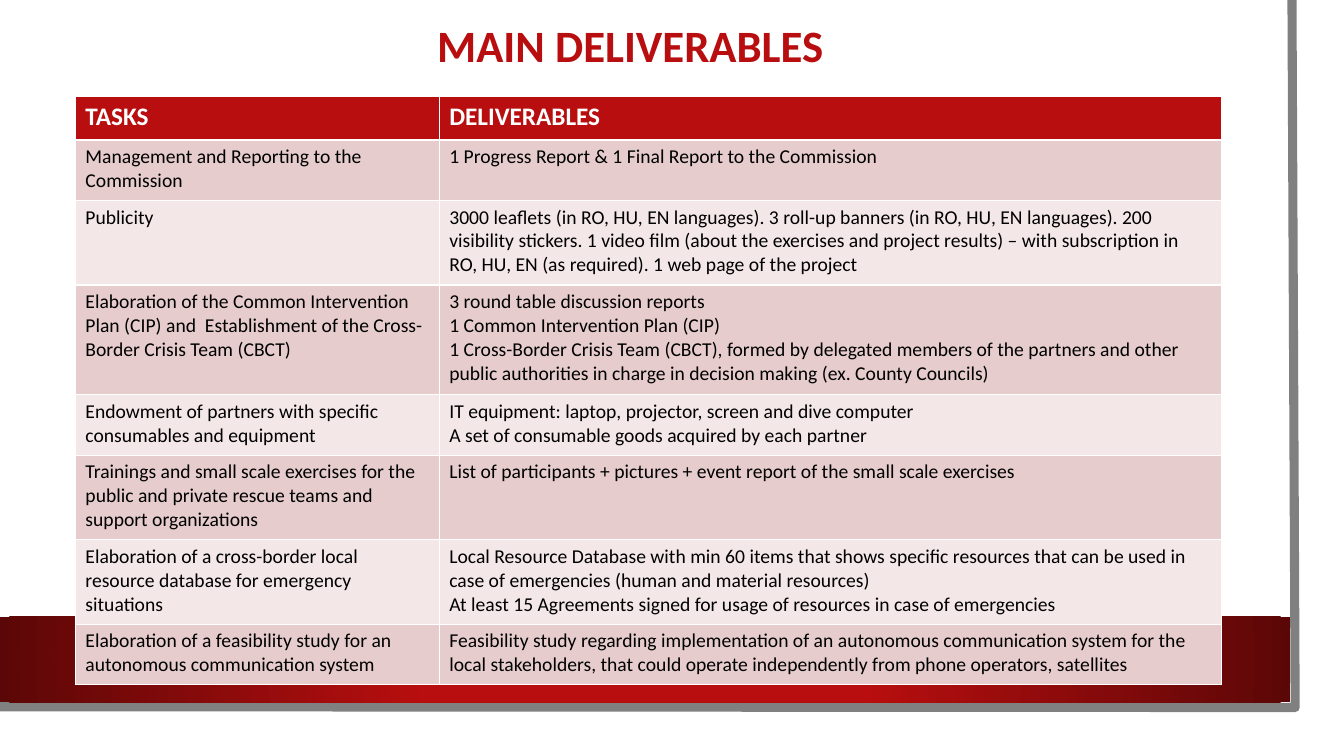
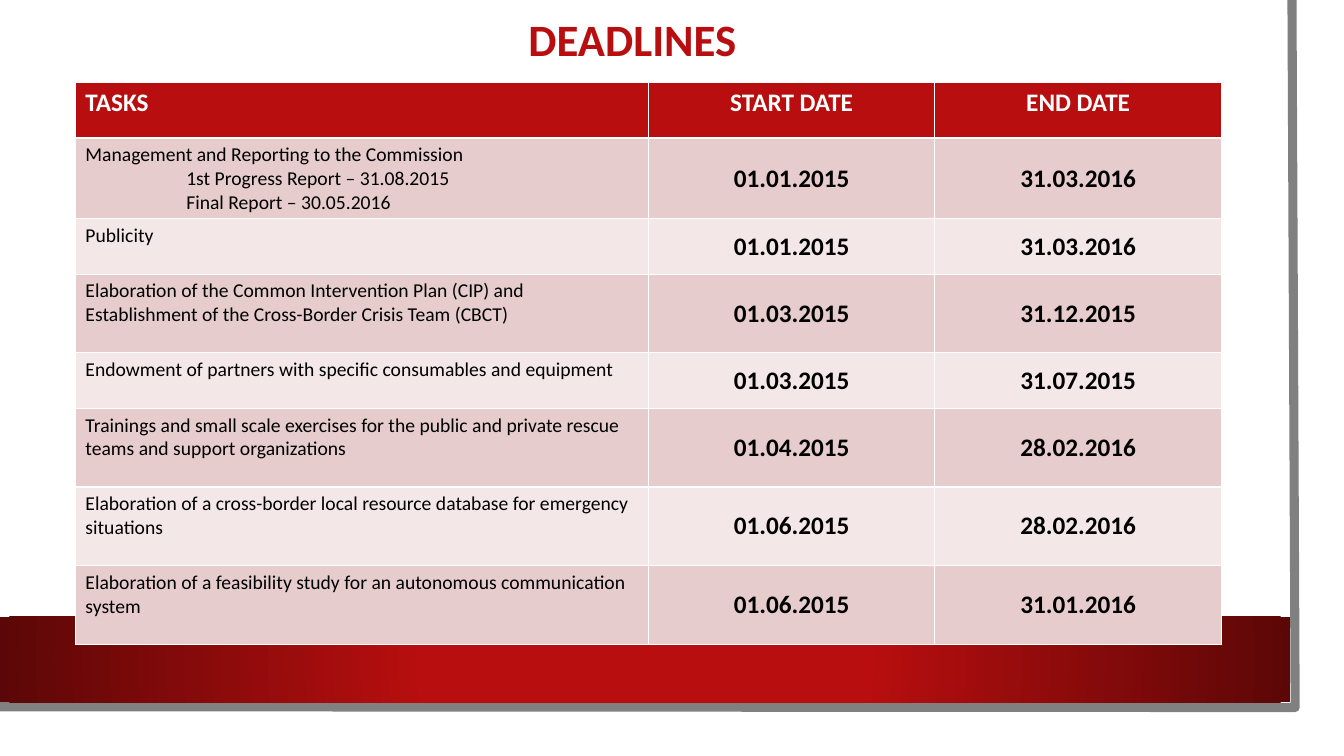
from dataclasses import dataclass

import lxml.etree
import pptx
import pptx.dml.color
import pptx.enum.shapes
import pptx.enum.text
import pptx.oxml.ns
import pptx.presentation
import pptx.slide
import pptx.table
import pptx.text.text
import pptx.util

Cm = pptx.util.Cm
Pt = pptx.util.Pt
RGBColor = pptx.dml.color.RGBColor
Align = pptx.enum.text.PP_ALIGN
Anchor = pptx.enum.text.MSO_ANCHOR

RED = RGBColor(0xB8, 0x0E, 0x0F)
DARK_RED = RGBColor(0x5C, 0x07, 0x07)
GREY = RGBColor(0x80, 0x80, 0x80)
WHITE = RGBColor(0xFF, 0xFF, 0xFF)
BLACK = RGBColor(0x00, 0x00, 0x00)
ROW_FILLS = (RGBColor(0xE6, 0xCC, 0xCC), RGBColor(0xF3, 0xE7, 0xE7))

FONT = "Calibri"
TABLE_LEFT = 1.9
TABLE_WIDTH = 28.88
FRAME_POINTS = ((32.56, 0), (32.64, 17.83), (-0.08, 17.81))
SUBITEM_INDENT = Cm(2.54)

TASKS = (
    "Management and Reporting to the Commission",
    "Publicity",
    "Elaboration of the Common Intervention Plan (CIP) and  Establishment of the "
    "Cross-Border Crisis Team (CBCT)",
    "Endowment of partners with specific consumables and equipment",
    "Trainings and small scale exercises for the public and private rescue teams "
    "and support organizations",
    "Elaboration of a cross-border local resource database for emergency situations",
    "Elaboration of a feasibility study for an autonomous communication system",
)
DELIVERABLES = (
    "1 Progress Report & 1 Final Report to the Commission",
    "3000 leaflets (in RO, HU, EN languages). 3 roll-up banners (in RO, HU, EN "
    "languages). 200 visibility stickers. 1 video film (about the exercises and "
    "project results) – with subscription in RO, HU, EN (as required). "
    "1 web page of the project",
    "3 round table discussion reports\n"
    "1 Common Intervention Plan (CIP)\n"
    "1 Cross-Border Crisis Team (CBCT), formed by delegated members of the partners "
    "and other public authorities in charge in decision making (ex. County Councils)",
    "IT equipment: laptop, projector, screen and dive computer\n"
    "A set of consumable goods acquired by each partner",
    "List of participants + pictures + event report of the small scale exercises",
    "Local Resource Database with min 60 items that shows specific resources that can "
    "be used in case of emergencies (human and material resources)\n"
    "At least 15 Agreements signed for usage of resources in case of emergencies",
    "Feasibility study regarding implementation of an autonomous communication system "
    "for the local stakeholders, that could operate independently from phone "
    "operators, satellites",
)
REPORT_DATES = "\n1st Progress Report – 31.08.2015\nFinal Report – 30.05.2016"
START_DATES = ("01.01.2015", "01.01.2015", "01.03.2015", "01.03.2015",
               "01.04.2015", "01.06.2015", "01.06.2015")
END_DATES = ("31.03.2016", "31.03.2016", "31.12.2015", "31.07.2015",
             "28.02.2016", "28.02.2016", "31.01.2016")


@dataclass(frozen=True)
class Column:
    heading: str
    width: float
    entries: tuple[str, ...]
    is_date: bool = False
    indent_subitems: bool = False


@dataclass(frozen=True)
class TableSlide:
    title: str
    title_box: tuple[float, float, float, float]
    table_top: float
    row_heights: tuple[float, ...]
    columns: tuple[Column, ...]


TABLE_SLIDES = (
    TableSlide(
        "MAIN DELIVERABLES", (1.45, 0, TABLE_WIDTH, 2.44), 2.44,
        (1.09, 1.52, 2.13, 2.77, 1.52, 2.13, 2.13, 1.52),
        (Column("TASKS", 9.17, TASKS),
         Column("DELIVERABLES", TABLE_WIDTH - 9.17, DELIVERABLES)),
    ),
    TableSlide(
        "DEADLINES", (1.5, -0.46, TABLE_WIDTH, 3.05), 2.08,
        (1.4, 2.03, 1.4, 1.98, 1.4, 1.98, 1.98, 1.98),
        (Column("TASKS", TABLE_WIDTH / 2, (TASKS[0] + REPORT_DATES, *TASKS[1:]),
                indent_subitems=True),
         Column("START DATE", TABLE_WIDTH / 4, START_DATES, is_date=True),
         Column("END DATE", TABLE_WIDTH / 4, END_DATES, is_date=True)),
    ),
)


def format_text(text_frame: pptx.text.text.TextFrame, size: float, color: RGBColor,
                bold: bool, alignment: Align) -> None:
    for paragraph in text_frame.paragraphs:
        paragraph.alignment = alignment
        for run in paragraph.runs:
            run.font.name = FONT
            run.font.size = Pt(size)
            run.font.bold = bold
            run.font.color.rgb = color


def add_frame(slide: pptx.slide.Slide) -> None:
    """Draw the grey corner line along the right and bottom edges."""
    points = [(Cm(x), Cm(y)) for x, y in FRAME_POINTS]
    builder = slide.shapes.build_freeform(*points[0])
    builder.add_line_segments(points[1:], close=False)
    shape = builder.convert_to_shape()
    shape.shadow.inherit = False
    shape.fill.background()
    shape.line.color.rgb = GREY
    shape.line.width = Pt(6.5)


def add_band(slide: pptx.slide.Slide) -> None:
    """Draw the bottom band, red in the middle and dark towards its ends."""
    shape = slide.shapes.add_shape(pptx.enum.shapes.MSO_SHAPE.RECTANGLE,
                                   Cm(0), Cm(15.54), Cm(32.51), Cm(2.16))
    shape.shadow.inherit = False
    shape.line.fill.background()
    shape.fill.gradient()
    stops = ((0.34, RED), (1, DARK_RED))
    for stop, (position, color) in zip(shape.fill.gradient_stops, stops):
        stop.position = position
        stop.color.rgb = color
    qn = pptx.oxml.ns.qn
    linear = shape.fill._xPr.find(qn("a:gradFill")).find(qn("a:lin"))
    radial = lxml.etree.Element(qn("a:path"), path="circle")
    lxml.etree.SubElement(radial, qn("a:fillToRect"),
                          dict.fromkeys("ltrb", "50000"))
    linear.getparent().replace(linear, radial)


def add_title(slide: pptx.slide.Slide, text: str,
              box: tuple[float, float, float, float]) -> None:
    text_frame = slide.shapes.add_textbox(*map(Cm, box)).text_frame
    text_frame.word_wrap = True
    text_frame.vertical_anchor = Anchor.MIDDLE
    text_frame.text = text
    text_frame.paragraphs[0].line_spacing = 0.9
    format_text(text_frame, 32, RED, True, Align.CENTER)


def fill_cell(cell: pptx.table._Cell, text: str, column: Column, row: int) -> None:
    is_heading = row == 0
    cell.fill.solid()
    cell.fill.fore_color.rgb = RED if is_heading else ROW_FILLS[(row - 1) % 2]
    cell.text_frame.text = text
    emphasized = is_heading or column.is_date
    format_text(cell.text_frame, 18 if emphasized else 14,
                WHITE if is_heading else BLACK, emphasized,
                Align.CENTER if column.is_date else Align.LEFT)
    if column.is_date and not is_heading:
        cell.vertical_anchor = Anchor.MIDDLE
        cell.margin_left = cell.margin_right = Cm(0.18)
        cell.margin_top = cell.margin_bottom = 0
    if column.indent_subitems:
        for paragraph in cell.text_frame.paragraphs[1:]:
            paragraph._p.get_or_add_pPr().set("marL", str(SUBITEM_INDENT))


def add_task_table(slide: pptx.slide.Slide, content: TableSlide) -> None:
    heights = content.row_heights
    table = slide.shapes.add_table(
        len(heights), len(content.columns), Cm(TABLE_LEFT), Cm(content.table_top),
        Cm(TABLE_WIDTH), Cm(sum(heights))).table
    table.horz_banding = False
    for table_row, height in zip(table.rows, heights):
        table_row.height = Cm(height)
    for column_index, column in enumerate(content.columns):
        table.columns[column_index].width = Cm(column.width)
        for row, text in enumerate((column.heading, *column.entries)):
            fill_cell(table.cell(row, column_index), text, column, row)


def add_table_slide(presentation: pptx.presentation.Presentation,
                    content: TableSlide) -> None:
    slide = presentation.slides.add_slide(presentation.slide_layouts[6])
    add_frame(slide)
    add_band(slide)
    add_title(slide, content.title, content.title_box)
    add_task_table(slide, content)


def main() -> None:
    presentation = pptx.Presentation()
    presentation.slide_width = Cm(33.87)
    presentation.slide_height = Cm(19.05)
    for content in TABLE_SLIDES:
        add_table_slide(presentation, content)
    presentation.save("out.pptx")


if __name__ == "__main__":
    main()
